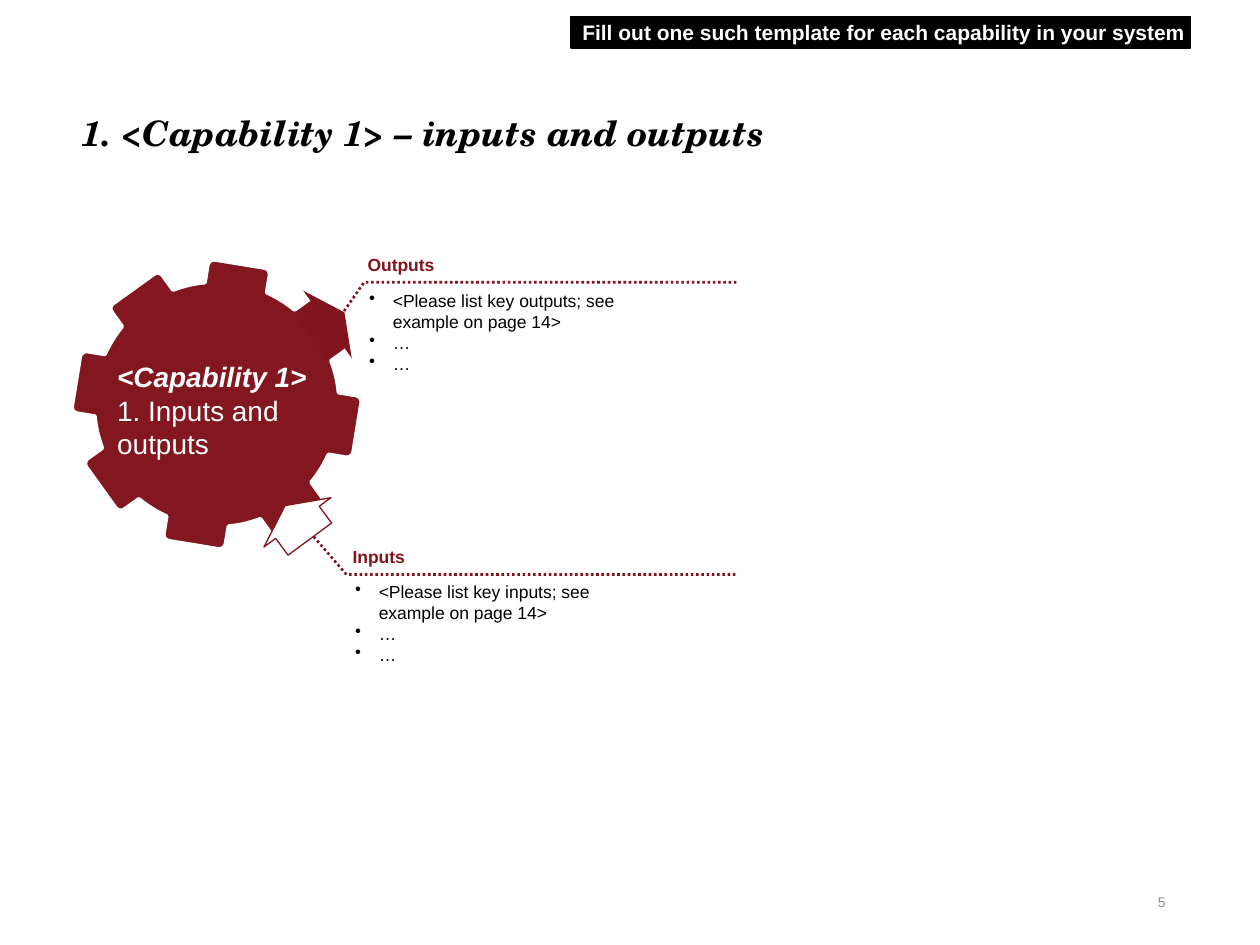
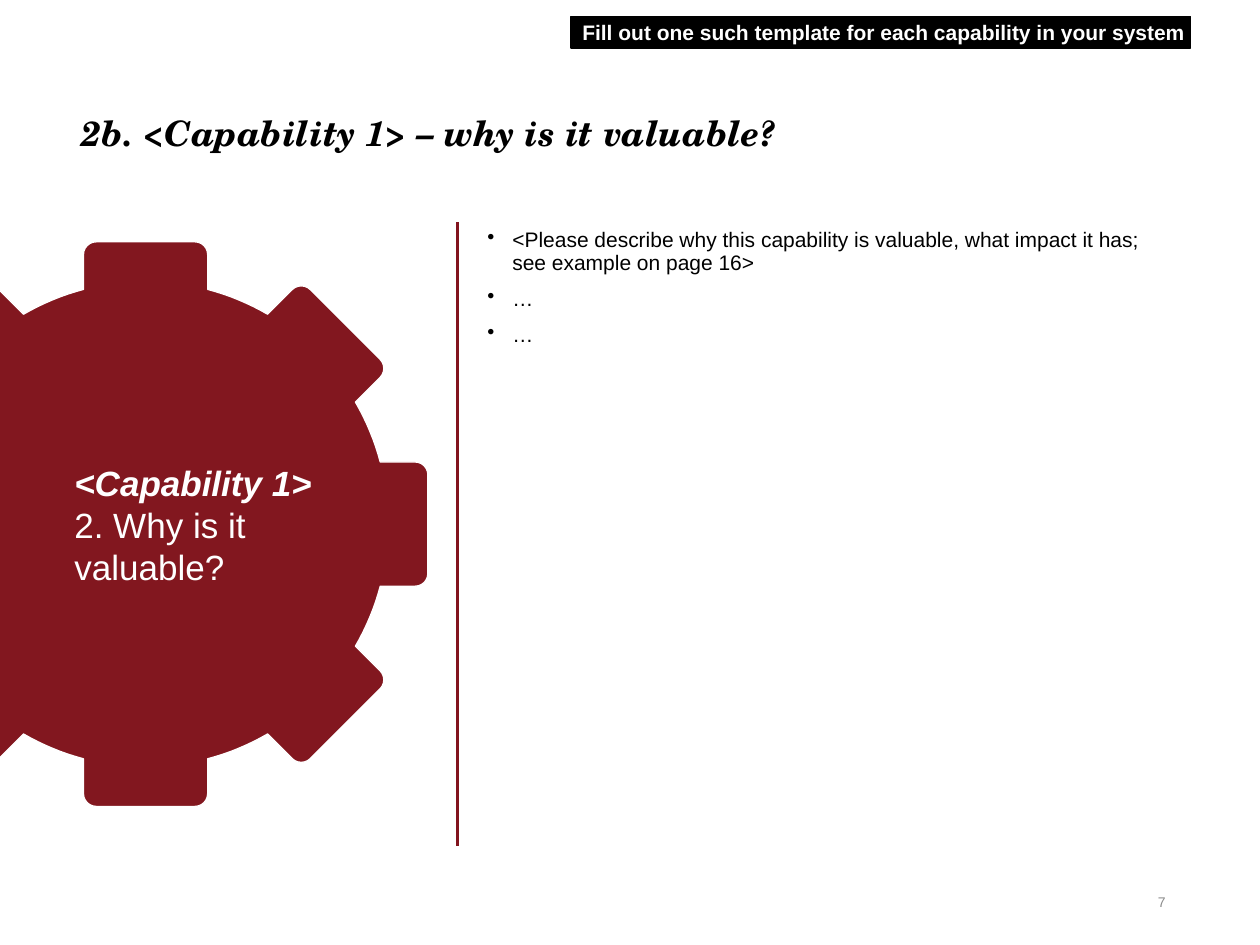
from math import asin, cos, pi, radians, sin

from lxml import etree
from pptx import Presentation
from pptx.dml.color import RGBColor
from pptx.enum.dml import MSO_LINE
from pptx.enum.shapes import MSO_CONNECTOR, MSO_SHAPE
from pptx.enum.text import MSO_ANCHOR, PP_ALIGN
from pptx.oxml.ns import qn
from pptx.util import Pt

RECTANGLE, DOWN_ARROW = MSO_SHAPE.RECTANGLE, MSO_SHAPE.DOWN_ARROW
MIDDLE, RIGHT = MSO_ANCHOR.MIDDLE, PP_ALIGN.RIGHT
DOTTED, STRAIGHT = MSO_LINE.ROUND_DOT, MSO_CONNECTOR.STRAIGHT

BLACK = RGBColor(0x00, 0x00, 0x00)
WHITE = RGBColor(0xFF, 0xFF, 0xFF)
GREY = RGBColor(0x8C, 0x8C, 0x8C)
GEAR_RED = RGBColor(0x82, 0x17, 0x1F)
ACCENT_RED = RGBColor(0x82, 0x14, 0x1E)

BOLD = {"bold": True}
BOLD_ITALIC = {"bold": True, "italic": True}
TITLE_FONT = {"name": "TeX Gyre Schola", **BOLD_ITALIC}
TITLE_SPACING = {"line_spacing": Pt(23)}
LIST_SPACING = {"line_spacing": 0.9, "space_before": Pt(7.7)}
FLUSH = (0, 0, 0, 0)


def write(box, lines, size, colour, margins=FLUSH, anchor=None, wrap=True,
          spacing=None, indent=0):
    """Fill a box with (text, font values) lines; an indent makes bullets."""
    frame = box.text_frame
    frame.word_wrap = wrap
    if anchor is not None:
        frame.vertical_anchor = anchor
    for side, margin in zip(("left", "top", "right", "bottom"), margins):
        setattr(frame, f"margin_{side}", Pt(margin))
    for index, (text, font) in enumerate(lines):
        para = frame.add_paragraph() if index else frame.paragraphs[0]
        if indent:
            properties = para._p.get_or_add_pPr()
            properties.set("marL", str(Pt(indent)))
            properties.set("indent", str(-Pt(indent)))
            etree.SubElement(properties, qn("a:buChar")).set("char", "•")
        for key, value in (spacing or {}).items():
            if index or key != "space_before":
                setattr(para, key, value)
        span = para.add_run()
        span.text = text
        for key, value in {"name": "Arial", "size": Pt(size), **font}.items():
            setattr(span.font, key, value)
        span.font.color.rgb = colour


def outline(page, points, line_colour, line_width, fill=None):
    """Draw points as a closed filled shape, or as an open line without fill."""
    corners = [(Pt(x), Pt(y)) for x, y in points]
    builder = page.shapes.build_freeform(*corners[0])
    builder.add_line_segments(corners[1:], close=fill is not None)
    shape = builder.convert_to_shape()
    shape.shadow.inherit = False
    if fill is None:
        shape.fill.background()
    else:
        shape.fill.solid()
        shape.fill.fore_color.rgb = fill
    shape.line.color.rgb = line_colour
    shape.line.width = Pt(line_width)
    return shape


# Gear of radius 1 with eight round-cornered teeth
TEETH, HALF_TOOTH, ROOT, CORNER = 8, 0.22, 0.86, 0.045
pitch = 2 * pi / TEETH
root_angle = asin(HALF_TOOTH / ROOT)
bend = [radians(step * 15) for step in range(7)]
inset = 1 - CORNER
side = HALF_TOOTH - CORNER
upper = [(inset + CORNER * sin(a), -side - CORNER * cos(a)) for a in bend]
tooth = upper + [(x, -y) for x, y in reversed(upper)]
gap = [root_angle + (pitch - 2 * root_angle) * step / 8 for step in range(9)]
tooth += [(ROOT * cos(a), ROOT * sin(a)) for a in gap]
gear = [(x * cos(turn) - y * sin(turn), x * sin(turn) + y * cos(turn))
        for turn in (pitch * number for number in range(TEETH))
        for x, y in tooth]

deck = Presentation()
deck.slide_width, deck.slide_height = Pt(720), Pt(540)

# Title, banner, page number and gear on both slides
SLIDES = [
    {"title": "1. <Capability 1> – inputs and outputs", "number": "5",
     "question": "1. Inputs and outputs", "size": 16,
     "label": (67, 205.2, 129.6, 58.3),
     "centre": (123.8, 231.1), "radius": 81.4, "turn": 54.3, "rim": 2.25},
    {"title": "2b. <Capability 1> – why is it valuable?", "number": "7",
     "question": "2. Why is it valuable?", "size": 20,
     "label": (42.5, 263.5, 141.1, 72.7),
     "centre": (83.2, 299.5), "radius": 161.3, "turn": 0, "rim": 0.75},
]
LEFT_EDGE = -3
pages = []
for content in SLIDES:
    page = deck.slides.add_slide(deck.slide_layouts[6])
    pages.append(page)

    box = page.shapes.add_textbox(Pt(46.8), Pt(64.8), Pt(626.4), Pt(23.8))
    write(box, [(content["title"], TITLE_FONT)], 20, BLACK,
          spacing=TITLE_SPACING)

    banner = page.shapes.add_shape(
        RECTANGLE, Pt(326.2), Pt(9.4), Pt(354.2), Pt(18))
    banner.shadow.inherit = False
    banner.fill.solid()
    banner.fill.fore_color.rgb = BLACK
    banner.line.color.rgb = BLACK
    banner.line.width = Pt(0.75)
    write(banner,
          [("Fill out one such template for each capability in your system",
            BOLD)],
          12, WHITE, (2.9, 1.4, 2.9, 1.4), MIDDLE, False,
          {"alignment": RIGHT})

    box = page.shapes.add_textbox(Pt(630.7), Pt(504), Pt(42.5), Pt(22.3))
    write(box, [(content["number"], {})], 8, GREY, (7.2, 3.6, 7.2, 3.6),
          MIDDLE, spacing={"alignment": RIGHT})

    (middle_x, middle_y), radius = content["centre"], content["radius"]
    points = [(max(LEFT_EDGE, middle_x + radius * x), middle_y + radius * y)
              for x, y in gear]
    wheel = outline(page, points, WHITE, content["rim"], GEAR_RED)
    wheel.rotation = content["turn"]

    box = page.shapes.add_textbox(*map(Pt, content["label"]))
    write(box, [("<Capability 1>", BOLD_ITALIC), (content["question"], {})],
          content["size"], WHITE, anchor=MIDDLE)

# Slide 1: an arrow, a dotted leader, a heading and a list per direction
FLOWS = [
    ("Outputs", (163.4, 173.5), 234.3, ACCENT_RED, None,
     (203, 141.8), (211, 165.6),
     [(196.6, 177.8), (208.1, 161.3), (421.2, 161.3)]),
    ("Inputs", (146.2, 286.6), 143.6, WHITE, ACCENT_RED,
     (194.4, 308.2), (203, 331.9),
     [(179.3, 306.7), (198, 328.3), (421.2, 328.3)]),
]
page = pages[0]
for name, place, turn, fill, edge, heading, listing, leader in FLOWS:
    arrow = page.shapes.add_shape(
        DOWN_ARROW, *map(Pt, place), Pt(47.5), Pt(23.8))
    arrow.shadow.inherit = False
    arrow.rotation = turn
    arrow.adjustments[0], arrow.adjustments[1] = 0.651, 0.5
    arrow.fill.solid()
    arrow.fill.fore_color.rgb = fill
    if edge is None:
        arrow.line.fill.background()
    else:
        arrow.line.color.rgb = edge
        arrow.line.width = Pt(0.75)

    outline(page, leader, ACCENT_RED, 1.5).line.dash_style = DOTTED

    box = page.shapes.add_textbox(*map(Pt, heading), Pt(55), Pt(21.6))
    write(box, [(name, BOLD)], 10, ACCENT_RED, (7.2, 3.6, 7.2, 3.6),
          wrap=False)

    box = page.shapes.add_textbox(*map(Pt, listing), Pt(165.6), Pt(48.2))
    request = f"<Please list key {name.lower()}; see example on page 14>"
    write(box, [(request, {}), ("…", {}), ("…", {})], 10, BLACK, indent=13.5)

# Slide 2: a vertical rule and the reasons beside it
page = pages[1]
rule = page.shapes.add_connector(
    STRAIGHT, Pt(261.6), Pt(126.9), Pt(261.6), Pt(483.6))
rule.line.color.rgb = ACCENT_RED
rule.line.width = Pt(1.5)
etree.SubElement(rule._element.spPr, qn("a:effectLst"))

box = page.shapes.add_textbox(Pt(270), Pt(125.3), Pt(403.2), Pt(354.2))
request = ("<Please describe why this capability is valuable, "
           "what impact it has; see example on page 16>")
write(box, [(request, {}), ("…", {}), ("…", {})], 12, BLACK,
      (8.6, 5.8, 2.9, 0), spacing=LIST_SPACING, indent=14.2)

deck.save("out.pptx")
